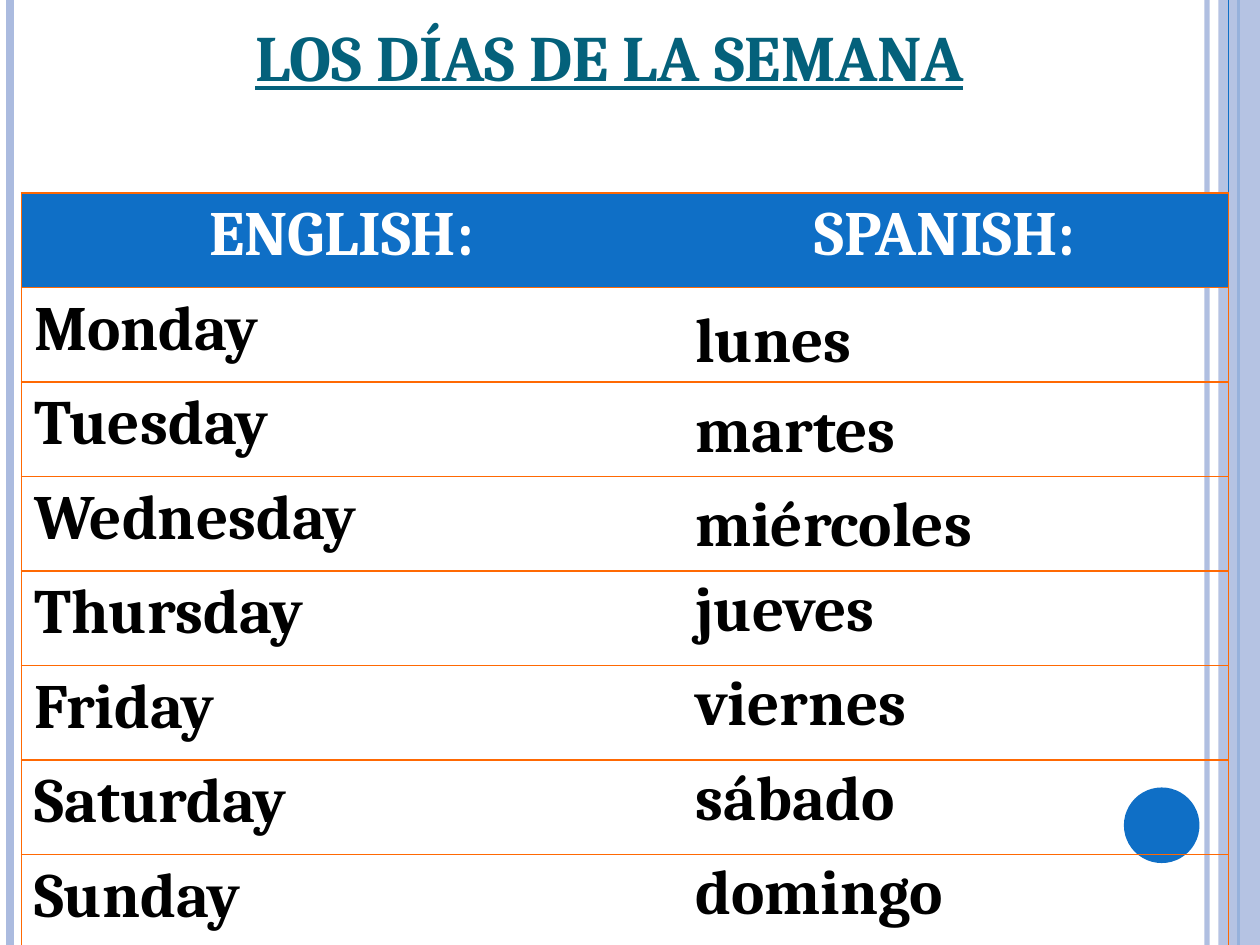
from lxml.etree import SubElement
from pptx import Presentation
from pptx.dml.color import RGBColor
from pptx.enum.shapes import MSO_CONNECTOR, MSO_SHAPE
from pptx.enum.text import MSO_ANCHOR, MSO_AUTO_SIZE, PP_ALIGN
from pptx.oxml import parse_xml
from pptx.oxml.ns import nsdecls, qn
from pptx.util import Inches, Pt

LAVENDER = RGBColor(0xAB, 0xBB, 0xDF)
BLUE = RGBColor(0x0F, 0x6F, 0xC6)
TEAL = RGBColor(0x04, 0x61, 0x7B)
ORANGE = RGBColor(0xFF, 0x69, 0x03)
BLACK = RGBColor(0, 0, 0)
WHITE = RGBColor(0xFF, 0xFF, 0xFF)

DAYS = [
    ("Monday", "lunes", 2.33),
    ("Tuesday", "martes", 3.04),
    ("Wednesday", "miércoles", 3.79),
    ("Thursday", "jueves", 4.46),
    ("Friday", "viernes", 5.21),
    ("Saturday", "sábado", 5.96),
    ("Sunday", "domingo", 6.71),
]


class SlideBuilder:
    font_name = "Cambria"
    border_width = Pt(1)

    def __init__(self, slide):
        self.slide = slide

    def set_opacity(self, element, percent):
        for color in element.iter(qn("a:srgbClr")):
            SubElement(color, qn("a:alpha"), val=str(percent * 1000))

    def vertical_line(self, x, color, width, opacity=100):
        line = self.slide.shapes.add_connector(
            MSO_CONNECTOR.STRAIGHT, Inches(x), 0, Inches(x), Inches(7.5))
        line.line.color.rgb = color
        line.line.width = Pt(width)
        properties = line._element.spPr
        if opacity < 100:
            self.set_opacity(properties, opacity)
        SubElement(properties, qn("a:effectLst"))

    def shape(self, kind, left, top, width, height, color, opacity=100):
        shape = self.slide.shapes.add_shape(
            kind, Inches(left), Inches(top), Inches(width), Inches(height))
        shape.shadow.inherit = False
        shape.fill.solid()
        shape.fill.fore_color.rgb = color
        shape.line.fill.background()
        if opacity < 100:
            self.set_opacity(shape._element.spPr, opacity)

    def set_text(self, frame, text, size, color, align, underline=None):
        paragraph = frame.paragraphs[0]
        paragraph.text = text
        paragraph.alignment = align
        font = paragraph.font
        font.name = self.font_name
        font.size = Pt(size)
        font.bold = True
        font.underline = underline
        font.color.rgb = color

    def text_box(self, left, top, width, height):
        box = self.slide.shapes.add_textbox(
            Inches(left), Inches(top), Inches(width), Inches(height))
        box.text_frame.word_wrap = True
        return box.text_frame

    def title(self, text, left, top, width, height):
        frame = self.text_box(left, top, width, height)
        frame.vertical_anchor = MSO_ANCHOR.BOTTOM
        self.set_text(frame, text, 37, TEAL, PP_ALIGN.CENTER, True)

    def label(self, text, left, top, width, height):
        frame = self.text_box(left, top, width, height)
        frame.auto_size = MSO_AUTO_SIZE.SHAPE_TO_FIT_TEXT
        self.set_text(frame, text, 36, BLACK, PP_ALIGN.LEFT)

    def borders(self, cell, visible_sides):
        properties = cell._tc.get_or_add_tcPr()
        for position, side in enumerate("LRTB"):
            paint = "<a:noFill/>"
            if side in visible_sides:
                paint = f'<a:solidFill><a:srgbClr val="{ORANGE}"/></a:solidFill>'
            properties.insert(position, parse_xml(
                f'<a:ln{side} {nsdecls("a")} w="{self.border_width}">{paint}</a:ln{side}>'))

    def table(self, rows, left, top, column_widths, row_height):
        table = self.slide.shapes.add_table(
            len(rows), len(column_widths), Inches(left), Inches(top),
            Inches(sum(column_widths)), Inches(row_height * len(rows))).table
        table.first_row = False
        table.horz_banding = False
        for column, width in zip(table.columns, column_widths):
            column.width = Inches(width)
        for row_index, texts in enumerate(rows):
            table.rows[row_index].height = Inches(row_height)
            for column_index, text in enumerate(texts):
                cell = table.cell(row_index, column_index)
                if row_index == 0:
                    cell.fill.solid()
                    cell.fill.fore_color.rgb = BLUE
                    self.set_text(cell.text_frame, text, 36, WHITE, PP_ALIGN.CENTER)
                else:
                    cell.fill.background()
                    self.set_text(cell.text_frame, text, 36, BLACK, PP_ALIGN.LEFT)
                self.borders(cell, "LTB" if column_index == 0 else "RTB")


def main():
    presentation = Presentation()
    presentation.slide_width = Inches(10)
    presentation.slide_height = Inches(7.5)
    builder = SlideBuilder(
        presentation.slides.add_slide(presentation.slide_layouts[6]))

    builder.vertical_line(9.58, LAVENDER, 3, 93)
    builder.vertical_line(0.08, LAVENDER, 4.5)
    builder.vertical_line(9.83, BLUE, 1.5)
    builder.shape(MSO_SHAPE.RECTANGLE, 9.67, 0, 0.33, 7.5, LAVENDER, 87)
    builder.vertical_line(9.75, BLUE, 0.75)
    builder.shape(MSO_SHAPE.OVAL, 8.92, 6.25, 0.6, 0.6, BLUE)

    builder.title("LOS DÍAS DE LA SEMANA", 0.75, 0.08, 8.17, 0.72)
    rows = [("ENGLISH: ", "SPANISH: ")] + [(english, "") for english, _, _ in DAYS]
    builder.table(rows, 0.17, 1.53, (5.19, 4.39), 0.75)
    for _, spanish, top in DAYS:
        builder.label(spanish, 5.42, top, 3.33, 0.71)

    presentation.save("out.pptx")


if __name__ == "__main__":
    main()
